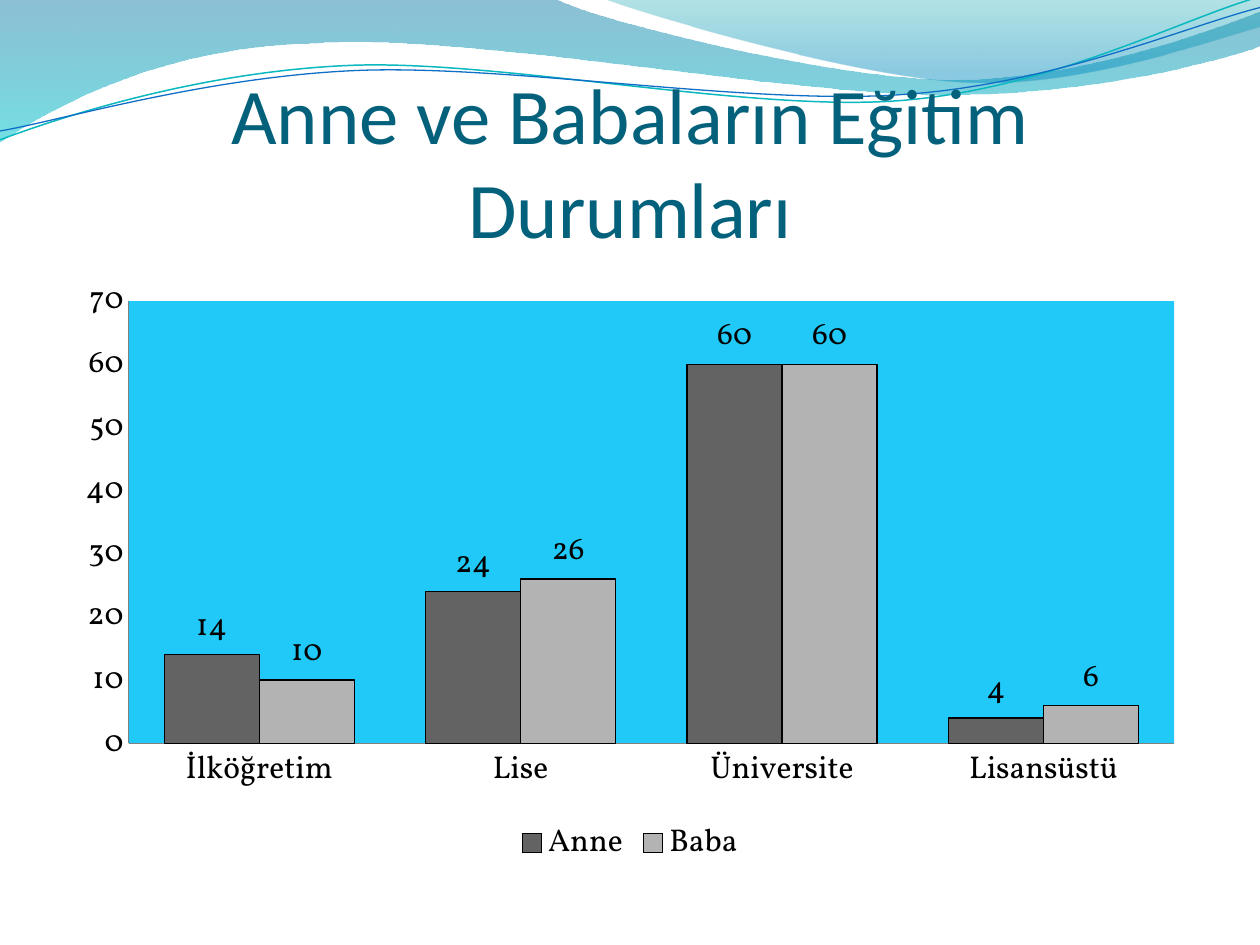
from dataclasses import dataclass

from lxml.etree import SubElement
from pptx import Presentation
from pptx.chart.data import CategoryChartData
from pptx.dml.color import RGBColor
from pptx.enum.chart import XL_CHART_TYPE, XL_LABEL_POSITION, XL_LEGEND_POSITION, XL_TICK_MARK
from pptx.enum.text import MSO_ANCHOR, MSO_AUTO_SIZE, PP_ALIGN
from pptx.oxml import parse_xml
from pptx.oxml.ns import nsdecls, qn
from pptx.util import Inches, Pt


@dataclass(frozen=True)
class Theme:
    title_font: str = "Calibri"
    chart_font: str = "Vollkorn"
    title_size: int = 45
    chart_size: int = 18
    title_color: str = "04617B"
    text: str = "000000"
    axis: str = "808080"
    plot: str = "20C9F8"
    mother: str = "636363"
    father: str = "B3B3B3"
    teal_line: str = "0AB8BF"
    blue_line: str = "0F6FC6"


def rgb(value):
    return RGBColor.from_string(value)


class SlideBuilder:
    def __init__(self, slide, theme):
        self.slide = slide
        self.theme = theme

    def outline(self, segments, closed):
        """Draw lines (one point) and Bezier curves (three points)."""
        points = [(Inches(x), Inches(y)) for segment in segments
                  for x, y in zip(segment[::2], segment[1::2])]
        builder = self.slide.shapes.build_freeform(*points[0])
        builder.add_line_segments(points[1:], close=closed)
        shape = builder.convert_to_shape()
        shape.shadow.inherit = False

        # Join the three steps of each curve into one Bezier command
        steps = iter(shape.element.spPr.findall(".//" + qn("a:lnTo")))
        for segment in segments[1:]:
            first = next(steps)
            if len(segment) == 6:
                first.tag = qn("a:cubicBezTo")
                for step in (next(steps), next(steps)):
                    first.append(step[0])
                    step.getparent().remove(step)
        return shape

    def wave(self, segments, stops):
        """Filled wave; each stop is position, colour, opacity in percent."""
        shape = self.outline(segments, True)
        shape.line.fill.background()
        shape.fill.gradient()
        shape.fill.gradient_angle = 270
        for stop, (position, color, _) in zip(shape.fill.gradient_stops, stops):
            stop.position = position
            stop.color.rgb = rgb(color)
        colors = shape.element.spPr.findall(".//" + qn("a:gs") + "/" + qn("a:srgbClr"))
        for color, (_, _, opacity) in zip(colors, stops):
            SubElement(color, qn("a:alpha")).set("val", str(opacity * 1000))

    def curve(self, segments, color, width):
        shape = self.outline(segments, False)
        shape.fill.background()
        shape.line.color.rgb = rgb(color)
        shape.line.width = Pt(width)

    def title(self, text, left, top, width, height):
        shape = self.slide.shapes.title
        shape.left, shape.top = Inches(left), Inches(top)
        shape.width, shape.height = Inches(width), Inches(height)
        # Bring the title in front of the waves
        self.slide.shapes.element.append(shape.element)
        frame = shape.text_frame
        frame.word_wrap = True
        frame.auto_size = MSO_AUTO_SIZE.NONE
        frame.vertical_anchor = MSO_ANCHOR.BOTTOM
        frame.margin_left = frame.margin_right = frame.margin_bottom = 0
        frame.margin_top = Inches(0.05)
        paragraph = frame.paragraphs[0]
        paragraph.alignment = PP_ALIGN.CENTER
        run = paragraph.add_run()
        run.text = text
        run.font.name = self.theme.title_font
        run.font.size = Pt(self.theme.title_size)
        run.font.color.rgb = rgb(self.theme.title_color)

    def column_chart(self, categories, series, left, top, width, height):
        """Series maps each name to its values and colour."""
        theme = self.theme
        data = CategoryChartData()
        data.categories = categories
        for name, (values, _) in series.items():
            data.add_series(name, values)
        chart = self.slide.shapes.add_chart(
            XL_CHART_TYPE.COLUMN_CLUSTERED, Inches(left), Inches(top),
            Inches(width), Inches(height), data).chart
        chart.has_title = False
        chart.font.name = theme.chart_font
        chart.font.size = Pt(theme.chart_size)
        chart.font.color.rgb = rgb(theme.text)
        chart.has_legend = True
        chart.legend.position = XL_LEGEND_POSITION.BOTTOM
        chart.legend.include_in_layout = False

        # Axes
        for axis in (chart.category_axis, chart.value_axis):
            axis.major_tick_mark = axis.minor_tick_mark = XL_TICK_MARK.NONE
            axis.has_major_gridlines = False
            axis.format.line.color.rgb = rgb(theme.axis)
        chart.value_axis.minimum_scale = 0
        chart.value_axis.maximum_scale = 70
        chart.value_axis.major_unit = 10

        # Columns and their labels
        plot = chart.plots[0]
        plot.gap_width = 75
        plot.overlap = 0
        plot.vary_by_categories = False
        for column, (_, color) in zip(plot.series, series.values()):
            column.format.fill.solid()
            column.format.fill.fore_color.rgb = rgb(color)
            column.format.line.color.rgb = rgb(theme.text)
            column.format.line.width = Pt(0.75)
            column.data_labels.show_value = True
            column.data_labels.position = XL_LABEL_POSITION.OUTSIDE_END

        # Margins and size of the plot area in inches, as parts of the chart
        self.plot_area(chart, x=0.52 / width, y=0.27 / height,
                       w=8.3 / width, h=3.51 / height)

    def plot_area(self, chart, **layout):
        """Place the inner plot area by fractions of the chart and fill it."""
        area = chart.element.find(".//" + qn("c:plotArea"))
        for old in area.findall(qn("c:layout")):
            area.remove(old)
        sizes = "".join(f'<c:{key} val="{value}"/>' for key, value in layout.items())
        area.insert(0, parse_xml(
            f'<c:layout {nsdecls("c")}><c:manualLayout><c:layoutTarget val="inner"/>'
            f'<c:xMode val="edge"/><c:yMode val="edge"/>{sizes}'
            '</c:manualLayout></c:layout>'))
        area.append(parse_xml(
            f'<c:spPr {nsdecls("c", "a")}><a:solidFill><a:srgbClr val="{self.theme.plot}"/>'
            '</a:solidFill><a:ln><a:noFill/></a:ln></c:spPr>'))


def main():
    presentation = Presentation()
    presentation.slide_width, presentation.slide_height = Inches(10), Inches(7.5)
    theme = Theme()
    builder = SlideBuilder(presentation.slides.add_slide(presentation.slide_layouts[5]), theme)

    # Waves along the top edge
    builder.wave(
        [(0, 0), (4.4, -0.01), (4.76, 0.17, 6.64, 0.63, 7.58, 0.63),
         (8.53, 0.63, 9.58, 0.26, 10, 0.09), (10.01, 0.36),
         (9.83, 0.44, 8.7, 0.76, 7.46, 0.75), (6.22, 0.75, 3.82, 0.28, 2.57, 0.34),
         (1.29, 0.36, 0.46, 0.83, -0.01, 1.13)],
        [(0, "0074A1", 45), (1, "00C6CF", 55)])
    builder.wave(
        [(4.79, -0.01), (5.09, 0.11, 6.82, 0.62, 7.69, 0.65),
         (8.56, 0.69, 9.61, 0.32, 10, 0.21), (10, 0)],
        [(0, "00A1A9", 30), (0.8, "008BBF", 45)])
    builder.curve(
        [(0, 1.11), (0.48, 0.93, 1.58, 0.57, 2.77, 0.52),
         (3.95, 0.47, 5.93, 0.89, 7.13, 0.8), (8.33, 0.71, 9.38, 0.15, 9.98, -0.02)],
        theme.teal_line, 0.85)
    builder.curve(
        [(0, 1.04), (0.47, 0.96, 1.64, 0.61, 2.83, 0.56),
         (4.03, 0.51, 5.97, 0.84, 7.17, 0.75), (8.36, 0.67, 9.41, 0.21, 10, 0.06)],
        theme.blue_line, 0.75)

    # Title and chart
    builder.title("Anne ve Babaların Eğitim Durumları", 0.5, 0.77, 9, 1.25)
    builder.column_chart(
        ["İlköğretim", "Lise", "Üniversite", "Lisansüstü"],
        {"Anne": ([14, 24, 60, 4], theme.mother), "Baba": ([10, 26, 60, 6], theme.father)},
        0.5, 2.12, 9, 4.8)

    presentation.save("out.pptx")


if __name__ == "__main__":
    main()
